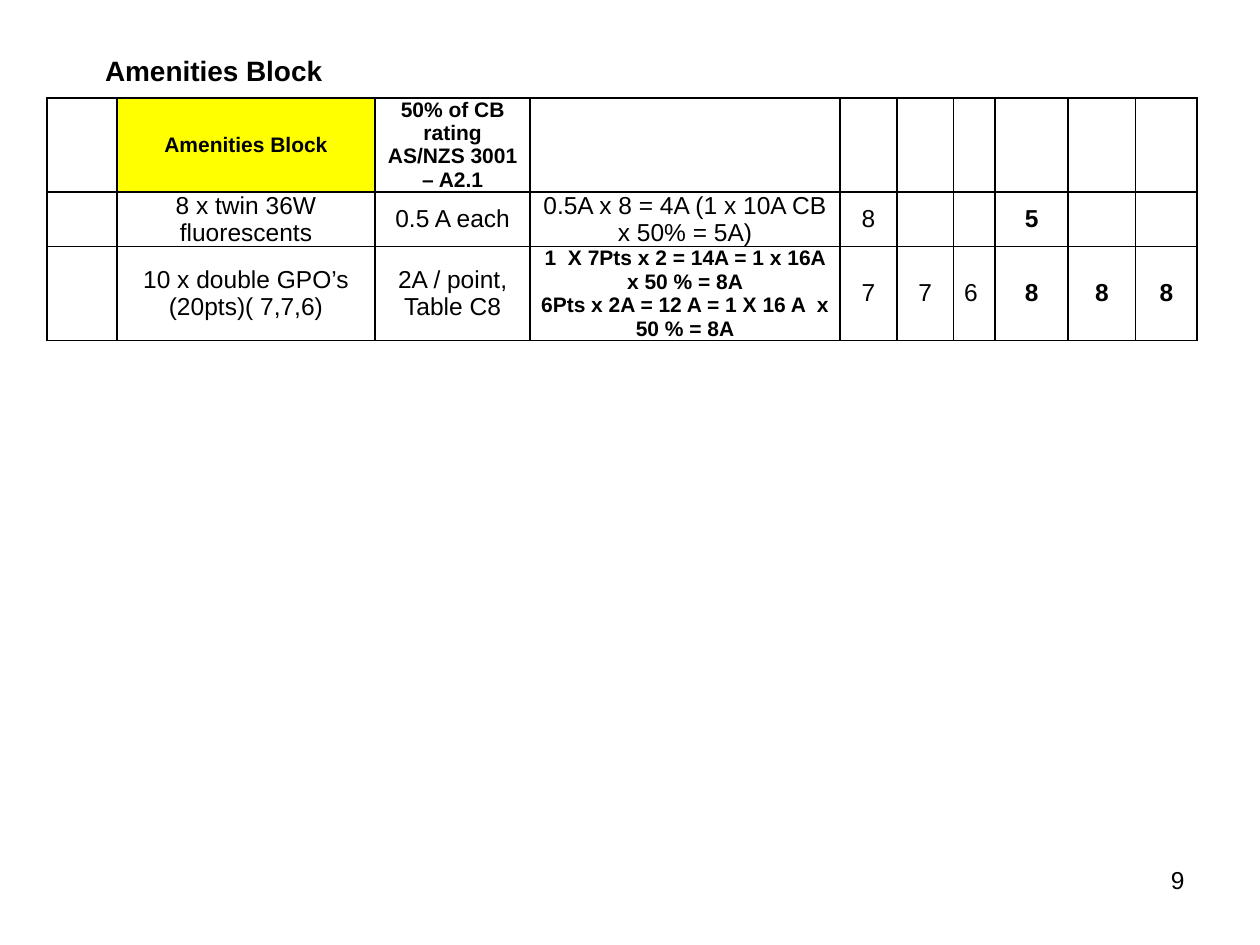
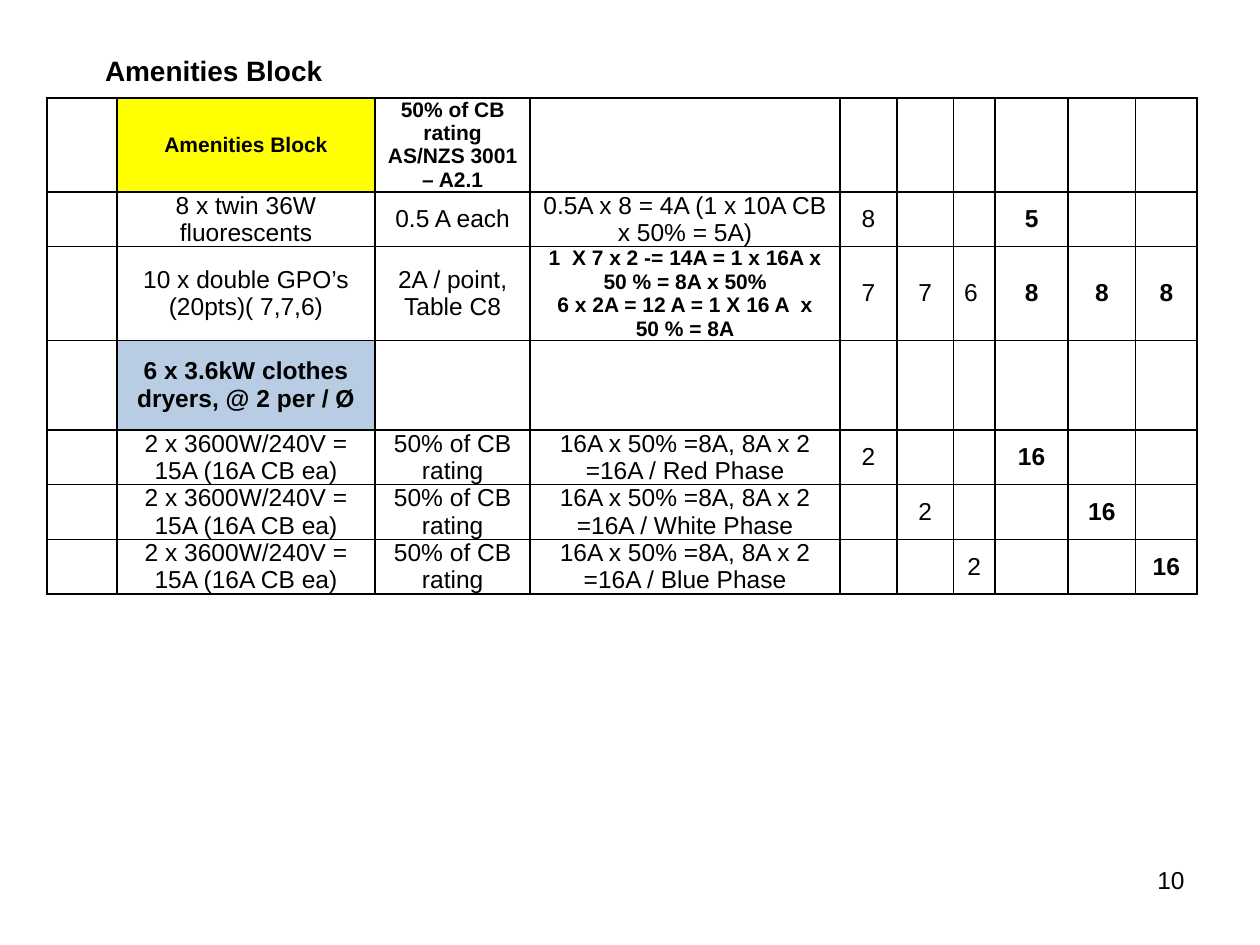
from pptx import Presentation, util as u
from pptx.dml.color import RGBColor
from pptx.enum import text
from pptx.oxml import parse_xml
from pptx.oxml.ns import nsdecls

BLACK = RGBColor(0x00, 0x00, 0x00)
YELLOW = RGBColor(0xFF, 0xFF, 0x00)
PALE_BLUE = RGBColor(0xB8, 0xCC, 0xE4)
FONT = "Arial"
LINE_PITCH = 1.117
WIDTH, HEIGHT = u.Inches(10), u.Inches(7.5)

TITLE_BOX = (7.35, 5.2, 87.65, 6.4)
NUMBER_BOX = (71.7, 91.07, 23.3, 6.93)
TABLE_BOX = (3.73, 10.37, 91.3)
COLUMN_SHARES = (5.55, 20.5, 12.3, 24.6, 4.5, 4.5, 3.3, 5.8, 5.35, 4.9)
HEADER_ROW, LOAD_ROW, GROUP_ROW = 8.53, 5.6, 9.47
CALCULATION, FIRST_CURRENT = 3, 7
SIDES = ("lnL", "lnR", "lnT", "lnB")

PHASES = ("Red", "White", "Blue")


def across(share):
    return round(WIDTH * share / 100)


def down(share):
    return round(HEIGHT * share / 100)


def format_text(frame, size, bold, align):
    for paragraph in frame.paragraphs:
        paragraph.alignment = align
        paragraph.line_spacing = u.Pt(size * LINE_PITCH)
        for run in paragraph.runs:
            run.font.name = FONT
            run.font.size = u.Pt(size)
            run.font.bold = bold
            run.font.color.rgb = BLACK


def add_label(slide, box, wording, size, bold, align):
    left, top, width, height = box
    label = slide.shapes.add_textbox(across(left), down(top), across(width), down(height))
    label.text_frame.word_wrap = True
    label.text_frame.text = wording
    format_text(label.text_frame, size, bold, align)


def style_cell(cell, fill):
    cell.margin_left = cell.margin_right = u.Inches(0.06)
    cell.margin_top = cell.margin_bottom = 0
    cell.vertical_anchor = text.MSO_ANCHOR.MIDDLE
    properties = cell._tc.get_or_add_tcPr()
    for side in SIDES:
        properties.append(parse_xml(
            f'<a:{side} {nsdecls("a")} w="{u.Pt(1)}"><a:solidFill>'
            f'<a:srgbClr val="{BLACK}"/></a:solidFill></a:{side}>'))
    if fill is None:
        cell.fill.background()
    else:
        cell.fill.solid()
        cell.fill.fore_color.rgb = fill


def header_row():
    return HEADER_ROW, YELLOW, {1: "Amenities Block", 2: "50% of CB rating\nAS/NZS 3001 – A2.1"}


def lighting_row():
    return LOAD_ROW, None, {
        1: "8 x twin 36W fluorescents", 2: "0.5 A each",
        3: "0.5A x 8 = 4A (1 x 10A CB x 50% = 5A)", 4: "8", 7: "5"}


def outlet_row(calculation):
    return LOAD_ROW, None, {
        1: "10 x double GPO’s (20pts)( 7,7,6)", 2: "2A / point, Table C8",
        3: calculation, 4: "7", 5: "7", 6: "6 ", 7: "8", 8: "8", 9: "8"}


def dryer_rows():
    rows = [(GROUP_ROW, PALE_BLUE, {1: "6 x 3.6kW clothes dryers, @ 2 per / Ø"})]
    for index, phase in enumerate(PHASES):
        rows.append((LOAD_ROW, None, {
            1: "2 x 3600W/240V = 15A (16A CB ea)", 2: "50% of CB rating",
            3: f"16A x 50% =8A, 8A x 2 =16A / {phase} Phase",
            4 + index: "2", FIRST_CURRENT + index: "16"}))
    return rows


def add_load_table(slide, box, rows):
    left, top, width = box
    total = sum(share for share, _, _ in rows)
    table = slide.shapes.add_table(
        len(rows), len(COLUMN_SHARES), across(left), down(top), across(width), down(total)).table
    table.first_row = table.horz_banding = False
    for column, share in zip(table.columns, COLUMN_SHARES):
        column.width = across(share)
    for index, (share, fill, entries) in enumerate(rows):
        table.rows[index].height = down(share)
        for position in range(len(COLUMN_SHARES)):
            cell = table.cell(index, position)
            style_cell(cell, fill if position == 1 else None)
            if position not in entries:
                continue
            wording = entries[position]
            cell.text_frame.text = wording
            working = position == CALCULATION and "\n" in wording
            small = share == HEADER_ROW or working
            bold = small or fill is not None or position >= FIRST_CURRENT
            format_text(cell.text_frame, 12 if small else 14, bold, text.PP_ALIGN.CENTER)


def add_load_slide(deck, number, rows):
    slide = deck.slides.add_slide(deck.slide_layouts[6])
    add_label(slide, NUMBER_BOX, str(number), 14, False, text.PP_ALIGN.RIGHT)
    add_label(slide, TITLE_BOX, "Amenities Block", 16, True, text.PP_ALIGN.LEFT)
    add_load_table(slide, TABLE_BOX, [header_row(), lighting_row(), *rows])


def main():
    deck = Presentation()
    deck.slide_width, deck.slide_height = WIDTH, HEIGHT
    add_load_slide(deck, 9, [outlet_row(
        "1  X 7Pts x 2 = 14A = 1 x 16A x 50 % = 8A\n6Pts x 2A = 12 A = 1 X 16 A  x\n50 % = 8A")])
    add_load_slide(deck, 10, [outlet_row(
        "1  X 7 x 2 -= 14A = 1 x 16A x 50 % = 8A x 50%\n6 x 2A = 12 A = 1 X 16 A  x\n50 % = 8A"),
        *dryer_rows()])
    deck.save("out.pptx")


if __name__ == "__main__":
    main()
